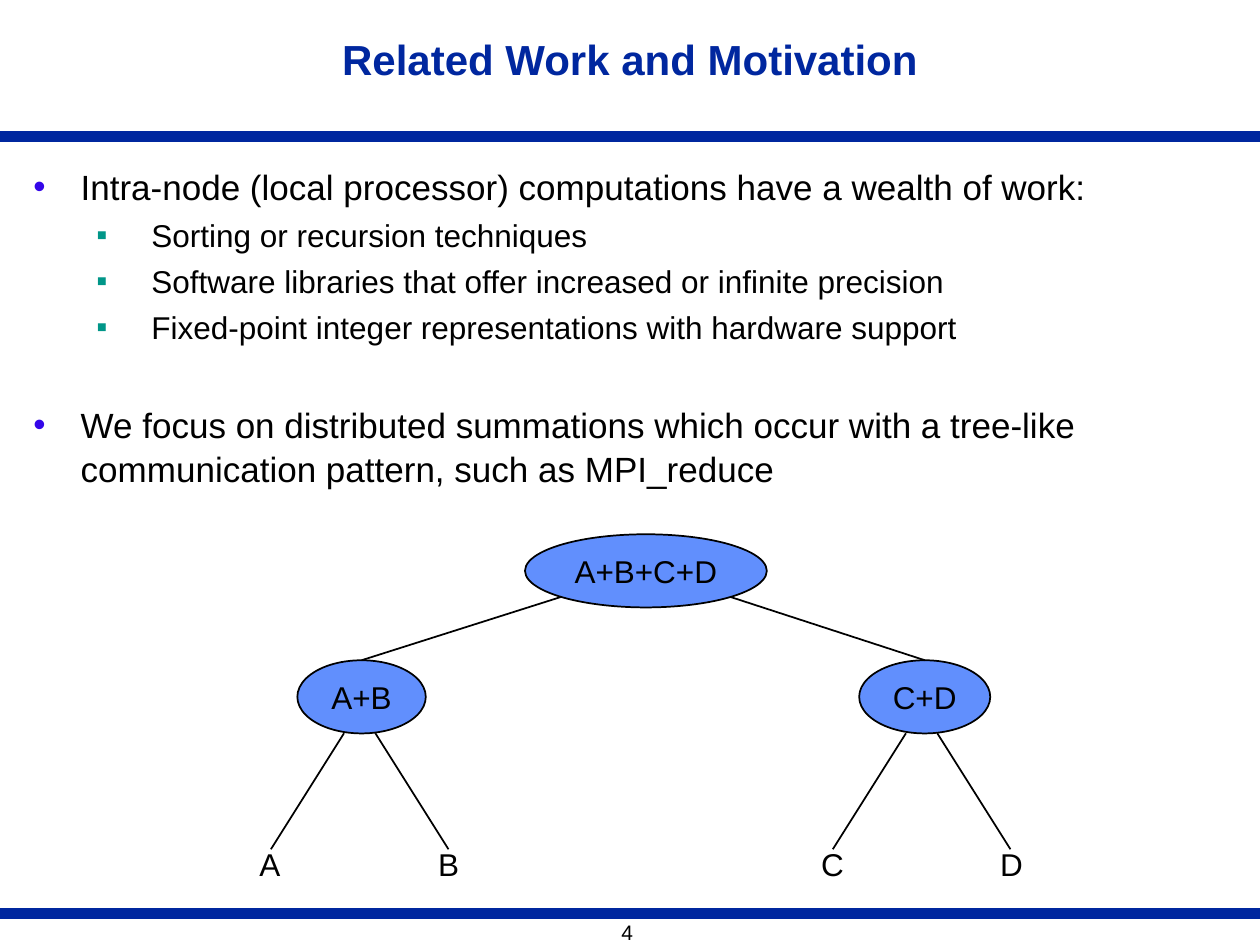
import pptx
import pptx.util
import pptx.dml.color
import pptx.enum.shapes
import pptx.enum.text
from lxml import etree

Pt = pptx.util.Pt
ALIGN = pptx.enum.text.PP_ALIGN
ANCHOR = pptx.enum.text.MSO_ANCHOR
KIND = pptx.enum.shapes

COLORS = {
    "navy": "00279F",
    "node": "618FFD",
    "black": "000000",
    "dot": "3406E9",
    "square": "009688",
}
NS = "http://schemas.openxmlformats.org/drawingml/2006/main"

# Bullet style per level: sign, colour, left margin, hang, size
LEVELS = [("•", "dot", 27, 27, 20), ("▪", "square", 67.5, 31.5, 18)]

# Level, space before, text
POINTS = [
    (0, 0, "Intra-node (local processor) computations have a wealth of work:"),
    (1, 3.6, "Sorting or recursion techniques"),
    (1, 3.6, "Software libraries that offer increased or infinite precision"),
    (1, 3.6, "Fixed-point integer representations with hardware support"),
    (0, 32, "We focus on distributed summations which occur with a tree-like "
            "communication pattern, such as MPI_reduce"),
]


def color(name):
    return pptx.dml.color.RGBColor.from_string(COLORS[name])


def write(para, text, size=18, ink="black", bold=False, align=ALIGN.LEFT,
          lead=None, before=0):
    """Put formatted text into a paragraph."""
    para.alignment = align
    para.space_before = Pt(before)
    if lead:
        para.line_spacing = lead
    run = para.add_run()
    run.text = text
    run.font.name = "Arial"
    run.font.size = Pt(size)
    run.font.bold = bold
    run.font.color.rgb = color(ink)


def add_box(slide, left, top, width, height, wrap=True, anchor=ANCHOR.TOP):
    box = slide.shapes.add_textbox(Pt(left), Pt(top), Pt(width), Pt(height))
    frame = box.text_frame
    frame.word_wrap = wrap
    frame.vertical_anchor = anchor
    return frame


def add_line(slide, start, end, ink="black", width=1):
    line = slide.shapes.add_connector(
        KIND.MSO_CONNECTOR.STRAIGHT, *map(Pt, start + end))
    line.line.color.rgb = color(ink)
    line.line.width = Pt(width)
    etree.SubElement(line._element.spPr, f"{{{NS}}}effectLst")


def add_node(slide, text, left, top, width, height=41.8):
    node = slide.shapes.add_shape(
        KIND.MSO_SHAPE.OVAL, Pt(left), Pt(top), Pt(width), Pt(height))
    node.shadow.inherit = False
    node.fill.solid()
    node.fill.fore_color.rgb = color("node")
    node.line.color.rgb = color("black")
    node.line.width = Pt(1)
    frame = node.text_frame
    frame.word_wrap = False
    frame.vertical_anchor = ANCHOR.MIDDLE
    write(frame.paragraphs[0], text, align=ALIGN.CENTER)


def add_bullet(para, level):
    sign, ink, margin, hang, size = LEVELS[level]
    para.level = level
    props = para._p.get_or_add_pPr()
    props.set("marL", str(Pt(margin)))
    props.set("indent", str(-Pt(hang)))
    tint = etree.SubElement(props, f"{{{NS}}}buClr")
    etree.SubElement(tint, f"{{{NS}}}srgbClr", val=COLORS[ink])
    etree.SubElement(props, f"{{{NS}}}buFont", typeface="Arial")
    etree.SubElement(props, f"{{{NS}}}buChar", char=sign)
    return size


def add_list(frame):
    for i, (level, before, text) in enumerate(POINTS):
        para = frame.add_paragraph() if i else frame.paragraphs[0]
        size = add_bullet(para, level)
        write(para, text, size=size, before=before, lead=1.05)


def add_branch(slide, left, width, names):
    """Draw a sum node with its two leaves; left is the first leaf's tip."""
    add_line(slide, (left, 485.3), (left + 41.8, 419))
    add_line(slide, (left + 101.5, 485.3), (left + 59.7, 419))
    add_node(slide, "+".join(names), left + 15.1, 377.3, width)
    for name, shift in zip(names, (-13.7, 88.5)):
        frame = add_box(slide, left + shift, 479.5, 27, 28.8, wrap=False)
        write(frame.paragraphs[0], name)


def main():
    deck = pptx.Presentation()
    deck.slide_width, deck.slide_height = Pt(720), Pt(540)
    slide = deck.slides.add_slide(deck.slide_layouts[6])

    # Rules and page number
    add_line(slide, (720, 522), (0, 522), "navy", 6)
    add_line(slide, (720, 78), (0, 78), "navy", 6.13)
    write(add_box(slide, 348, 522, 30, 21.6).paragraphs[0], "4", size=12)

    # Title
    title = add_box(slide, 126, 6, 468, 60, anchor=ANCHOR.MIDDLE)
    write(title.paragraphs[0], "Related Work and Motivation", size=24,
          ink="navy", bold=True, align=ALIGN.CENTER, lead=0.85)

    # Bullets
    add_list(add_box(slide, 12, 90, 696, 420))

    # Summation tree
    add_branch(slide, 154.8, 73.4, "AB")
    add_branch(slide, 475.9, 74.9, "CD")
    add_node(slide, "A+B+C+D", 300, 305.3, 138.2)
    add_line(slide, (206.6, 377.3), (320.4, 341.2))
    add_line(slide, (528.5, 377.3), (417.6, 341.2))

    deck.save("out.pptx")


if __name__ == "__main__":
    main()
